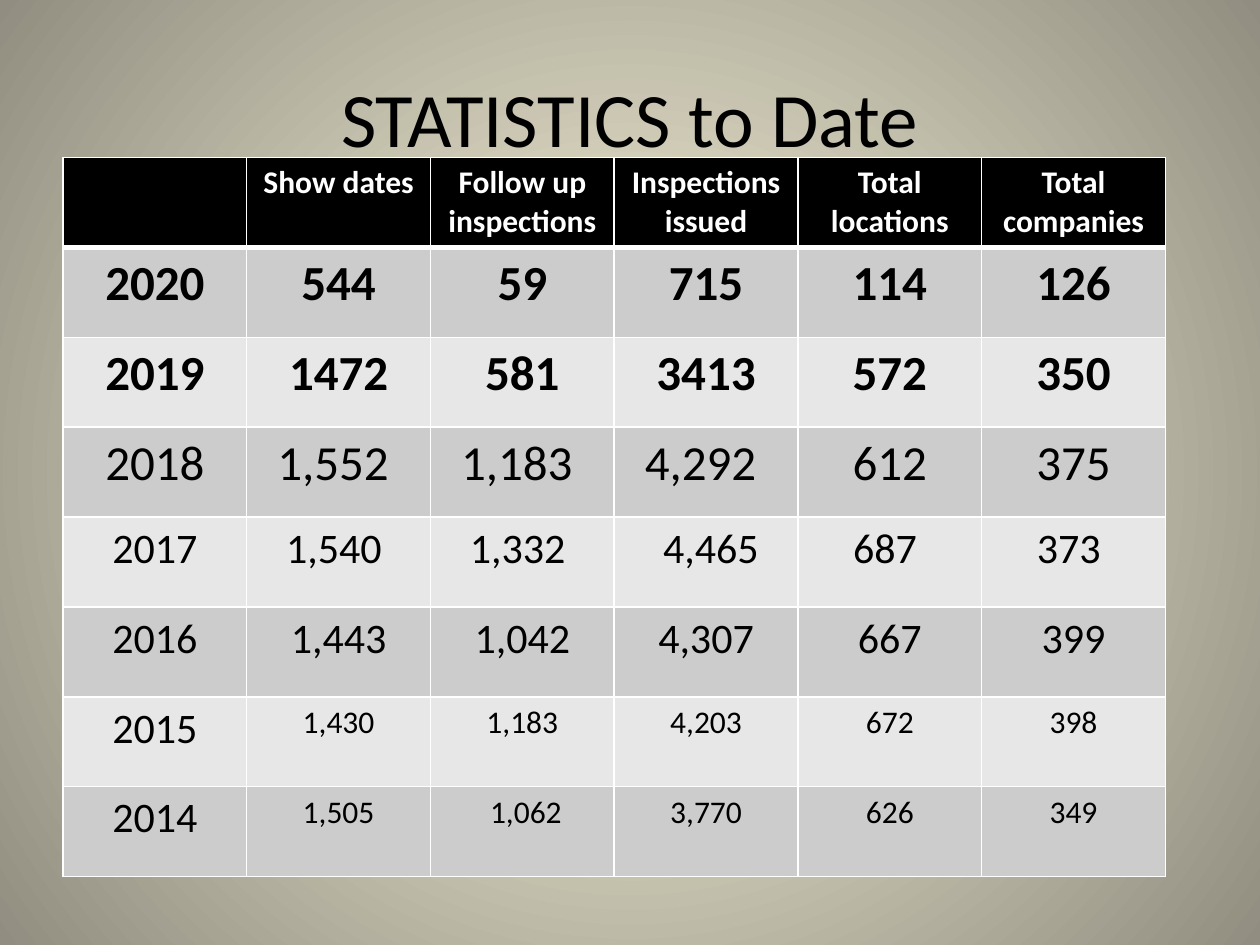
"""Build the inspection statistics slide with its yearly table."""
from dataclasses import dataclass

from lxml import etree
from pptx import Presentation
from pptx.dml.color import RGBColor
from pptx.enum import text
from pptx.oxml import ns
from pptx.util import Inches, Pt


@dataclass(frozen=True)
class Theme:
    font: str = "Calibri"
    ink: str = "000000"
    paper: str = "FFFFFF"
    bands: tuple = ("CCCCCC", "E7E7E7")
    glow: tuple = ("FCF7DD", "918E81")
    title_size: int = 44
    large: int = 28
    medium: int = 24
    small: int = 18
    rule: int = 1
    header_rule: int = 3


theme = Theme()


def style_paragraph(paragraph, size, color, bold=False):
    paragraph.alignment = text.PP_ALIGN.CENTER
    paragraph.font.name = theme.font
    paragraph.font.size = Pt(size)
    paragraph.font.bold = bold
    paragraph.font.color.rgb = RGBColor.from_string(color)


def add_border(cell, side, width):
    properties = cell._tc.get_or_add_tcPr()
    line = etree.SubElement(properties, ns.qn(f"a:ln{side}"), w=str(Pt(width)))
    paint = etree.SubElement(line, ns.qn("a:solidFill"))
    etree.SubElement(paint, ns.qn("a:srgbClr"), val=theme.paper)


headings = ["", "Show dates", "Follow up inspections", "Inspections issued",
            "Total locations", "Total companies"]
years = [
    (["2020", "544", "59", "715", "114", "126"], theme.large, theme.large, True),
    (["2019", "1472", "581", "3413", "572", "350"], theme.large, theme.large, True),
    (["2018", "1,552 ", "1,183 ", "4,292 ", "612", "375"], theme.large, theme.large, False),
    (["2017", "1,540 ", "1,332 ", " 4,465", "687 ", "373 "], theme.medium, theme.medium, False),
    (["2016", "1,443", "1,042", "4,307", "667", "399"], theme.medium, theme.medium, False),
    (["2015", "1,430", "1,183", "4,203", "672", "398"], theme.medium, theme.small, False),
    (["2014", "1,505", " 1,062", "3,770", "626", "349"], theme.medium, theme.small, False),
]
rows = [(headings, theme.small, theme.small, True)] + years

deck = Presentation()
deck.slide_width, deck.slide_height = Inches(10), Inches(7.5)
slide = deck.slides.add_slide(deck.slide_layouts[5])

backdrop = slide.background.fill
backdrop.gradient()
for stop, color in zip(backdrop.gradient_stops, theme.glow):
    stop.color.rgb = RGBColor.from_string(color)
gradient = slide._element.find(".//" + ns.qn("a:gradFill"))
gradient.remove(gradient.find(ns.qn("a:lin")))
circle = etree.SubElement(gradient, ns.qn("a:path"), path="circle")
etree.SubElement(circle, ns.qn("a:fillToRect"), l="50000", t="50000", r="50000", b="50000")

title = slide.shapes.title
title.left, title.top, title.width, title.height = map(Inches, (0.5, 0.3, 9, 1.25))
title.text_frame.text = "STATISTICS to Date"
title.text_frame.vertical_anchor = text.MSO_ANCHOR.MIDDLE
style_paragraph(title.text_frame.paragraphs[0], theme.title_size, theme.ink)

statistics = slide.shapes.add_table(
    len(rows), len(headings), Inches(0.5), Inches(1.25), Inches(8.75), Inches(5.71)).table

for r, (values, year_size, value_size, bold) in enumerate(rows):
    is_header = r == 0
    fill = theme.ink if is_header else theme.bands[(r - 1) % 2]
    color = theme.paper if is_header else theme.ink
    top = theme.header_rule if r == 1 else theme.rule
    bottom = theme.header_rule if is_header else theme.rule
    for c, value in enumerate(values):
        cell = statistics.cell(r, c)
        cell.text = value
        size = year_size if c == 0 else value_size
        style_paragraph(cell.text_frame.paragraphs[0], size, color, bold)
        for side, width in zip("LRTB", (theme.rule, theme.rule, top, bottom)):
            add_border(cell, side, width)
        cell.fill.solid()
        cell.fill.fore_color.rgb = RGBColor.from_string(fill)

deck.save("out.pptx")
